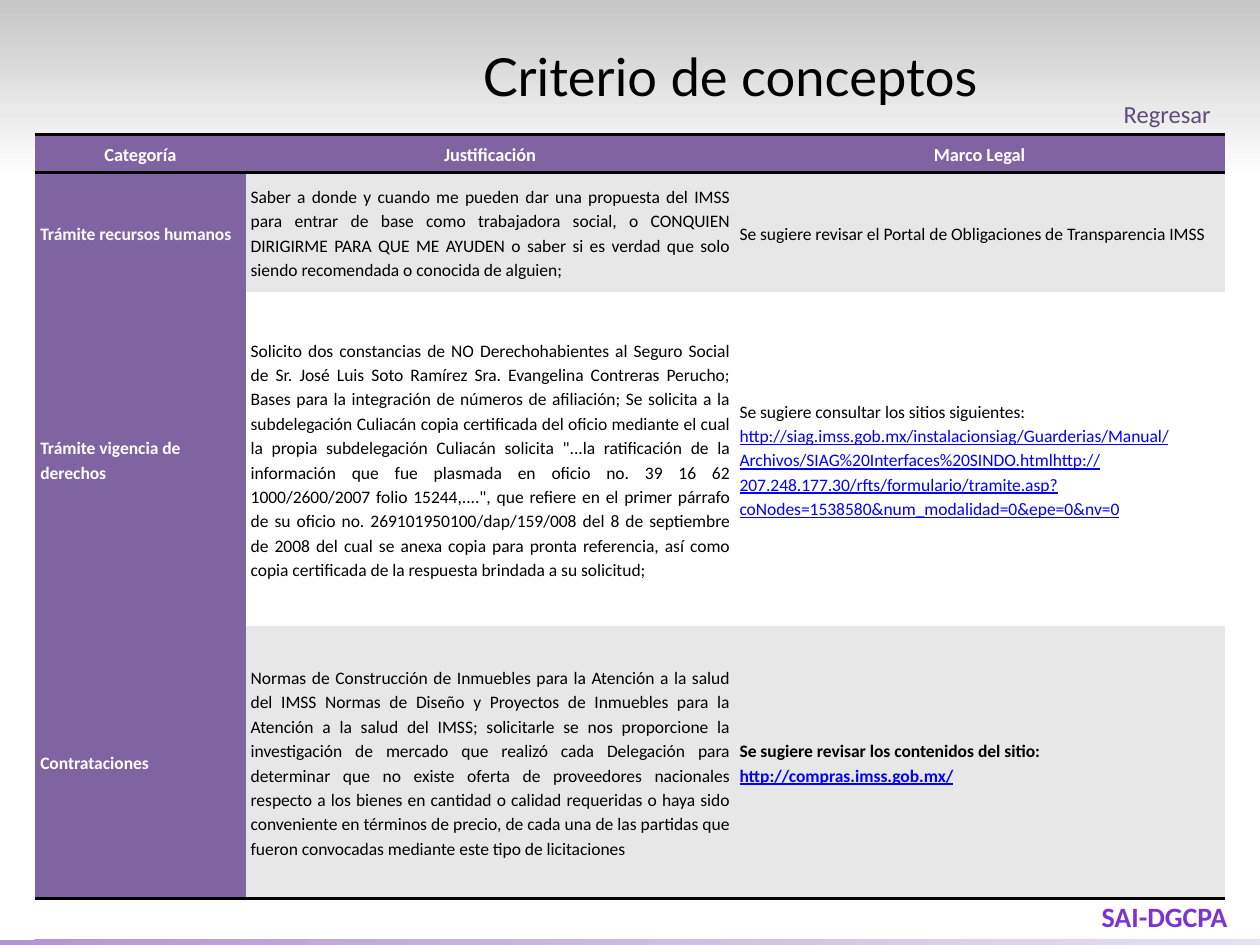
import pptx
import pptx.util
import pptx.dml.color
import pptx.enum.shapes
import pptx.enum.text
import pptx.oxml
import pptx.oxml.ns
from pptx.util import Inches

COLORS = {
    "purple": "8064A2", "grey": "E7E7E7", "white": "FFFFFF", "black": "000000",
    "link": "0000FF", "back": "604A7B", "brand": "7B34D2",
    "band_top": "C0C0C0", "bar_left": "B197D2", "bar_right": "E7E1F0",
}
ALIGN = pptx.enum.text.PP_ALIGN
ANCHOR = pptx.enum.text.MSO_ANCHOR
NO_STYLE = "{2D5ABB26-0587-4C30-8999-92F81FD0307C}"

HEADERS = ["Categoría", "Justificación", "Marco Legal"]
# Category, justification, legal note, link
ROWS = [
    ("Trámite recursos humanos",
     "Saber a donde y cuando me pueden dar una propuesta del IMSS para entrar de base como "
     "trabajadora social, o CONQUIEN DIRIGIRME PARA QUE ME AYUDEN o saber si es verdad que solo "
     "siendo recomendada o conocida de alguien;",
     "Se sugiere revisar el Portal de Obligaciones de Transparencia IMSS", None),
    ("Trámite vigencia de derechos",
     "Solicito dos constancias de NO Derechohabientes al Seguro Social de Sr. José Luis Soto "
     "Ramírez Sra. Evangelina Contreras Perucho; Bases para la integración de números de "
     "afiliación; Se solicita a la subdelegación Culiacán copia certificada del oficio mediante "
     "el cual la propia subdelegación Culiacán solicita \"...la ratificación de la información "
     "que fue plasmada en oficio no. 39 16 62 1000/2600/2007 folio 15244,....\", que refiere en "
     "el primer párrafo de su oficio no. 269101950100/dap/159/008 del 8 de septiembre de 2008 "
     "del cual se anexa copia para pronta referencia, así como copia certificada de la respuesta "
     "brindada a su solicitud;",
     "Se sugiere consultar los sitios siguientes:",
     "http://siag.imss.gob.mx/instalacionsiag/Guarderias/Manual/Archivos/"
     "SIAG%20Interfaces%20SINDO.htmlhttp://207.248.177.30/rfts/formulario/tramite.asp?"
     "coNodes=1538580&num_modalidad=0&epe=0&nv=0"),
    ("Contrataciones",
     "Normas de Construcción de Inmuebles para la Atención a la salud del IMSS Normas de Diseño "
     "y Proyectos de Inmuebles para la Atención a la salud del IMSS; solicitarle se nos "
     "proporcione la investigación de mercado que realizó cada Delegación para determinar que no "
     "existe oferta de proveedores nacionales respecto a los bienes en cantidad o calidad "
     "requeridas o haya sido conveniente en términos de precio, de cada una de las partidas que "
     "fueron convocadas mediante este tipo de licitaciones",
     "Se sugiere revisar los contenidos del sitio:", "http://compras.imss.gob.mx/"),
]


def rgb(name):
    return pptx.dml.color.RGBColor.from_string(COLORS[name])


def add_run(p, text, size, color, bold=False, font="Calibri", underline=None):
    r = p.add_run()
    r.text = text
    r.font.name = font
    r.font.size = pptx.util.Pt(size)
    r.font.bold = bold
    r.font.underline = underline
    r.font.color.rgb = rgb(color)


def add_gradient(s, box, first, last, angle):
    """Gradient rectangle placed behind the title."""
    sp = s.shapes.add_shape(pptx.enum.shapes.MSO_SHAPE.RECTANGLE, *map(Inches, box))
    sp.shadow.inherit = False
    sp.line.fill.background()
    sp.fill.gradient()
    sp.fill.gradient_angle = angle
    for stop, color, position in zip(sp.fill.gradient_stops, (first, last), (0, 1)):
        stop.color.rgb = rgb(color)
        stop.position = position
    s.shapes.title._element.addprevious(sp._element)


def add_title(s, box, text):
    title = s.shapes.title
    title.left, title.top, title.width, title.height = map(Inches, box)
    tf = title.text_frame
    tf.auto_size = pptx.enum.text.MSO_AUTO_SIZE.NONE
    tf.vertical_anchor = ANCHOR.TOP
    tf.paragraphs[0].alignment = ALIGN.CENTER
    add_run(tf.paragraphs[0], text, 30, "black", font="Lato")


def add_label(s, box, text, size, color, align, bold=False, wrap=True):
    tf = s.shapes.add_textbox(*map(Inches, box)).text_frame
    tf.word_wrap = wrap
    tf.paragraphs[0].alignment = align
    add_run(tf.paragraphs[0], text, size, color, bold)


def add_border(cell, *sides):
    """Black 2 pt rules; border elements come before the cell fill."""
    for i, side in enumerate(sides):
        ln = pptx.oxml.parse_xml(
            f'<a:{side} {pptx.oxml.ns.nsdecls("a")} w="{pptx.util.Pt(2)}"><a:solidFill>'
            f'<a:srgbClr val="{COLORS["black"]}"/></a:solidFill></a:{side}>')
        cell._tc.get_or_add_tcPr().insert(i, ln)


def fill_cell(cell, lines, fill, align, inset, size=10, color="white", bold=True):
    cell.fill.solid()
    cell.fill.fore_color.rgb = rgb(fill)
    cell.vertical_anchor = ANCHOR.MIDDLE
    cell.margin_left = cell.margin_right = Inches(inset)
    cell.margin_top = cell.margin_bottom = 0
    tf = cell.text_frame
    for i, text in enumerate(lines):
        p = tf.add_paragraph() if i else tf.paragraphs[0]
        p.alignment = align
        p.line_spacing = 1.15
        is_link = text.startswith("http")
        add_run(p, text, size, "link" if is_link else color, bold, underline=is_link or None)


def add_criteria_table(s, box, col_widths, row_heights):
    frame = s.shapes.add_table(len(row_heights), len(col_widths), *map(Inches, box))
    table = frame.table
    table._tbl.tblPr.find(pptx.oxml.ns.qn("a:tableStyleId")).text = NO_STYLE
    for col, width in zip(table.columns, col_widths):
        col.width = Inches(width)
    for row, height in zip(table.rows, row_heights):
        row.height = Inches(height)

    # Header row
    for c, text in enumerate(HEADERS):
        fill_cell(table.cell(0, c), [text], "purple", ALIGN.CENTER, 0.02, 10.5)
        add_border(table.cell(0, c), "lnT", "lnB")

    # Body rows, banded; the last legal note is bold
    for i, (category, reason, note, link) in enumerate(ROWS, 1):
        band = "grey" if i % 2 else "white"
        fill_cell(table.cell(i, 0), [category], "purple", ALIGN.LEFT, 0.04)
        fill_cell(table.cell(i, 1), [reason], band, ALIGN.JUSTIFY, 0.04,
                  color="black", bold=False)
        fill_cell(table.cell(i, 2), [note, link] if link else [note], band, ALIGN.JUSTIFY, 0.04,
                  color="black", bold=i == len(ROWS))
    for c in range(len(HEADERS)):
        add_border(table.cell(len(ROWS), c), "lnB")


def main():
    prs = pptx.Presentation()
    prs.slide_width, prs.slide_height = Inches(10), Inches(7.5)
    s = prs.slides.add_slide(prs.slide_layouts[5])

    # Background bands and footer name
    add_gradient(s, (0, 7.46, 10, 0.08), "bar_left", "bar_right", 315)
    add_gradient(s, (0, -0.14, 10, 1.55), "band_top", "white", 270)
    add_label(s, (8.23, 7.09, 1.61, 0.37), "SAI-DGCPA", 16, "brand", ALIGN.RIGHT, bold=True)

    # Title, table and return label
    add_title(s, (2.09, 0.3, 7.41, 0.95), "Criterio de conceptos")
    add_criteria_table(s, (0.28, 1.07, 9.44, 6.06), (1.67, 3.88, 3.89), (0.3, 0.95, 2.65, 2.16))
    add_label(s, (8.82, 0.74, 0.9, 0.34), "Regresar", 14, "back", ALIGN.LEFT, wrap=False)

    prs.save("out.pptx")


if __name__ == "__main__":
    main()
